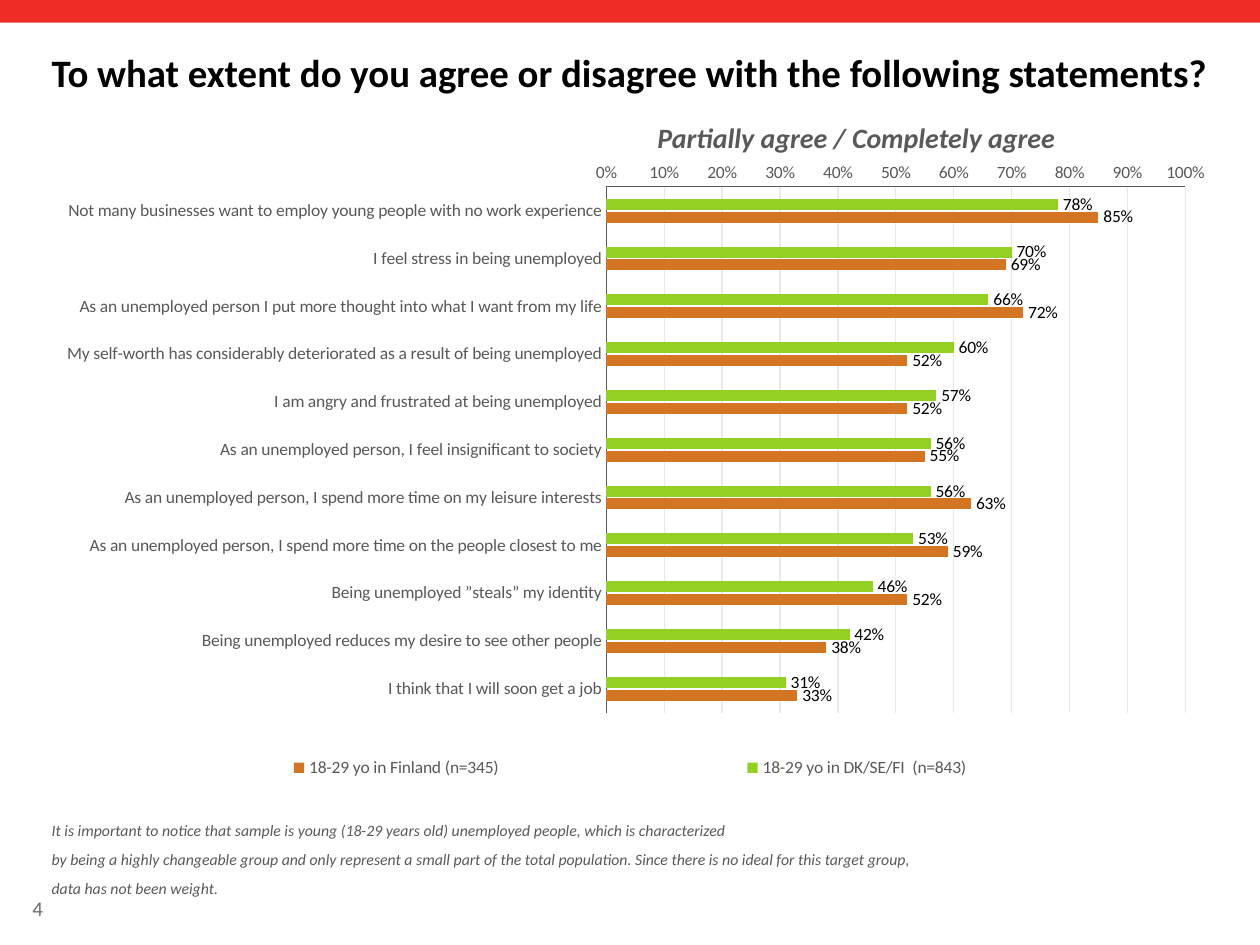
from lxml.etree import SubElement
from pptx import Presentation
from pptx.chart.data import CategoryChartData
from pptx.dml.color import RGBColor
from pptx.enum.chart import (XL_AXIS_CROSSES, XL_CHART_TYPE, XL_LABEL_POSITION,
                             XL_LEGEND_POSITION, XL_TICK_MARK)
from pptx.enum.shapes import MSO_SHAPE
from pptx.enum.text import MSO_ANCHOR, MSO_AUTO_SIZE, PP_ALIGN
from pptx.oxml.ns import qn
from pptx.util import Inches, Pt

RED = RGBColor(0xEE, 0x2D, 0x27)
BLACK = RGBColor(0, 0, 0)
DARK_GREY = RGBColor(0x59, 0x59, 0x59)
GREY = RGBColor(0x6D, 0x6F, 0x71)
GRID_GREY = RGBColor(0xE9, 0xE9, 0xEA)
GREEN = RGBColor(0x93, 0xD0, 0x23)
ORANGE = RGBColor(0xD3, 0x75, 0x23)

TITLE = "To what extent do you agree or disagree with the following statements?"
HEADING = "Partially agree / Completely agree"
PAGE_NUMBER = "4"
NOTE = [
    "It is important to notice that sample is young (18-29 years old) unemployed people, which is characterized",
    "by being a highly changeable group and only represent a small part of the total population. "
    "Since there is no ideal for this target group,",
    "data has not been weight.",
]
SERIES = [("18-29 yo in DK/SE/FI  (n=843)", GREEN), ("18-29 yo in Finland (n=345)", ORANGE)]
STATEMENTS = [
    ("Not many businesses want to employ young people with no work experience", 0.78, 0.85),
    ("I feel stress in being unemployed", 0.70, 0.69),
    ("As an unemployed person I put more thought into what I want from my life", 0.66, 0.72),
    ("My self-worth has considerably deteriorated as a result of being unemployed", 0.60, 0.52),
    ("I am angry and frustrated at being unemployed", 0.57, 0.52),
    ("As an unemployed person, I feel insignificant to society", 0.56, 0.55),
    ("As an unemployed person, I spend more time on my leisure interests", 0.56, 0.63),
    ("As an unemployed person, I spend more time on the people closest to me", 0.53, 0.59),
    ("Being unemployed ”steals” my identity", 0.46, 0.52),
    ("Being unemployed reduces my desire to see other people", 0.42, 0.38),
    ("I think that I will soon get a job", 0.31, 0.33),
]
PLOT_BOX = (0.48, 0.02, 0.49, 0.86)
LEGEND_BOX = (0.01, 0.94, 0.98, 0.06)


def set_font(font, size, color, bold=False, italic=False, name="Calibri"):
    font.name, font.size, font.bold, font.italic = name, Pt(size), bold, italic
    font.color.rgb = color


def place(shape, left, top, width, height):
    shape.left, shape.top = Inches(left), Inches(top)
    shape.width, shape.height = Inches(width), Inches(height)


def write(shape, lines, size, color, anchor, wrap=True, bold=False, italic=False):
    frame = shape.text_frame
    frame.text = "\n".join(lines)
    frame.word_wrap, frame.vertical_anchor = wrap, anchor
    frame.auto_size = MSO_AUTO_SIZE.NONE
    for index, paragraph in enumerate(frame.paragraphs):
        properties = paragraph._p.get_or_add_pPr()
        properties.set("marL", "0")
        properties.set("indent", "0")
        SubElement(properties, qn("a:buNone"))
        paragraph.alignment = PP_ALIGN.LEFT
        paragraph.line_spacing = 1.0
        paragraph.space_before = Pt(6 if index else 0)
        for run in paragraph.runs:
            set_font(run.font, size, color, bold, italic)


def set_layout(parent, box, inner=False):
    layout = parent.find(qn("c:layout"))
    if layout is None:
        layout = SubElement(parent, qn("c:layout"))
        parent.remove(layout)
        position = parent.find(qn("c:legendPos"))
        if position is None:
            parent.insert(0, layout)
        else:
            position.addnext(layout)
    manual = SubElement(layout, qn("c:manualLayout"))
    settings = [("layoutTarget", "inner")] if inner else []
    settings += [("xMode", "edge"), ("yMode", "edge")]
    settings += zip("xywh", map(str, box))
    for tag, value in settings:
        SubElement(manual, qn("c:" + tag)).set("val", value)


def add_statement_chart(slide):
    data = CategoryChartData(number_format="0%")
    labels, *columns = zip(*STATEMENTS)
    data.categories = labels
    for (name, _), values in zip(SERIES, columns):
        data.add_series(name, values)
    chart = slide.shapes.add_chart(XL_CHART_TYPE.BAR_CLUSTERED, Inches(0.31), Inches(1.29),
                                   Inches(9.38), Inches(4.95), data).chart
    set_font(chart.font, 10, GREY, name="Manrope")
    chart.has_title = False

    category_axis, value_axis = chart.category_axis, chart.value_axis
    for axis in (category_axis, value_axis):
        axis.major_tick_mark = axis.minor_tick_mark = XL_TICK_MARK.NONE
        set_font(axis.tick_labels.font, 10, DARK_GREY)
        axis.format.line.color.rgb = DARK_GREY
        axis.format.line.width = Pt(0.75)
    category_axis.reverse_order = True
    category_axis.crosses = XL_AXIS_CROSSES.MAXIMUM
    value_axis.minimum_scale, value_axis.maximum_scale, value_axis.major_unit = 0, 1, 0.1
    value_axis.tick_labels.number_format = "0%"
    value_axis.tick_labels.number_format_is_linked = False
    value_axis.has_major_gridlines = True
    value_axis.major_gridlines.format.line.color.rgb = GRID_GREY
    value_axis.major_gridlines.format.line.width = Pt(0.75)

    plot = chart.plots[0]
    plot.gap_width, plot.overlap, plot.vary_by_categories = 219, -17, False
    for series, (_, color) in zip(plot.series, SERIES):
        series.format.fill.solid()
        series.format.fill.fore_color.rgb = color
        value_labels = series.data_labels
        value_labels.show_value = True
        value_labels.position = XL_LABEL_POSITION.OUTSIDE_END
        value_labels.number_format = "0%"
        value_labels.number_format_is_linked = False
        set_font(value_labels.font, 10, BLACK)

    chart.has_legend = True
    legend = chart.legend
    legend.position = XL_LEGEND_POSITION.BOTTOM
    legend.include_in_layout = False
    set_font(legend.font, 10, DARK_GREY)
    set_layout(legend._element, LEGEND_BOX)
    set_layout(chart._chartSpace.chart.plotArea, PLOT_BOX, inner=True)


def main():
    presentation = Presentation()
    presentation.slide_width, presentation.slide_height = Inches(10), Inches(7.5)
    slide = presentation.slides.add_slide(presentation.slide_layouts[1])
    shapes = slide.shapes
    title, note = shapes.title, slide.placeholders[1]

    band = shapes.add_shape(MSO_SHAPE.RECTANGLE, 0, 0, Inches(10), Inches(0.18))
    band.shadow.inherit = False
    band.fill.solid()
    band.fill.fore_color.rgb = RED
    band.line.fill.background()

    number = shapes.add_textbox(Inches(0.16), Inches(7.06), Inches(0.77), Inches(0.3))
    write(number, [PAGE_NUMBER], 12, GREY, MSO_ANCHOR.MIDDLE)

    add_statement_chart(slide)

    place(title, 0.31, 0.34, 9.38, 0.76)
    write(title, [TITLE], 22.2, BLACK, MSO_ANCHOR.BOTTOM, bold=True)
    title.text_frame.margin_bottom = Inches(0.34)
    title.text_frame.margin_right = Inches(0.05)

    heading = shapes.add_textbox(Inches(5.12), Inches(0.91), Inches(3.4), Inches(0.37))
    write(heading, [HEADING], 16, DARK_GREY, MSO_ANCHOR.TOP, wrap=False, bold=True, italic=True)

    place(note, 0.31, 6.46, 9.37, 0.35)
    write(note, NOTE, 9, DARK_GREY, MSO_ANCHOR.TOP, italic=True)

    presentation.save("out.pptx")


if __name__ == "__main__":
    main()
